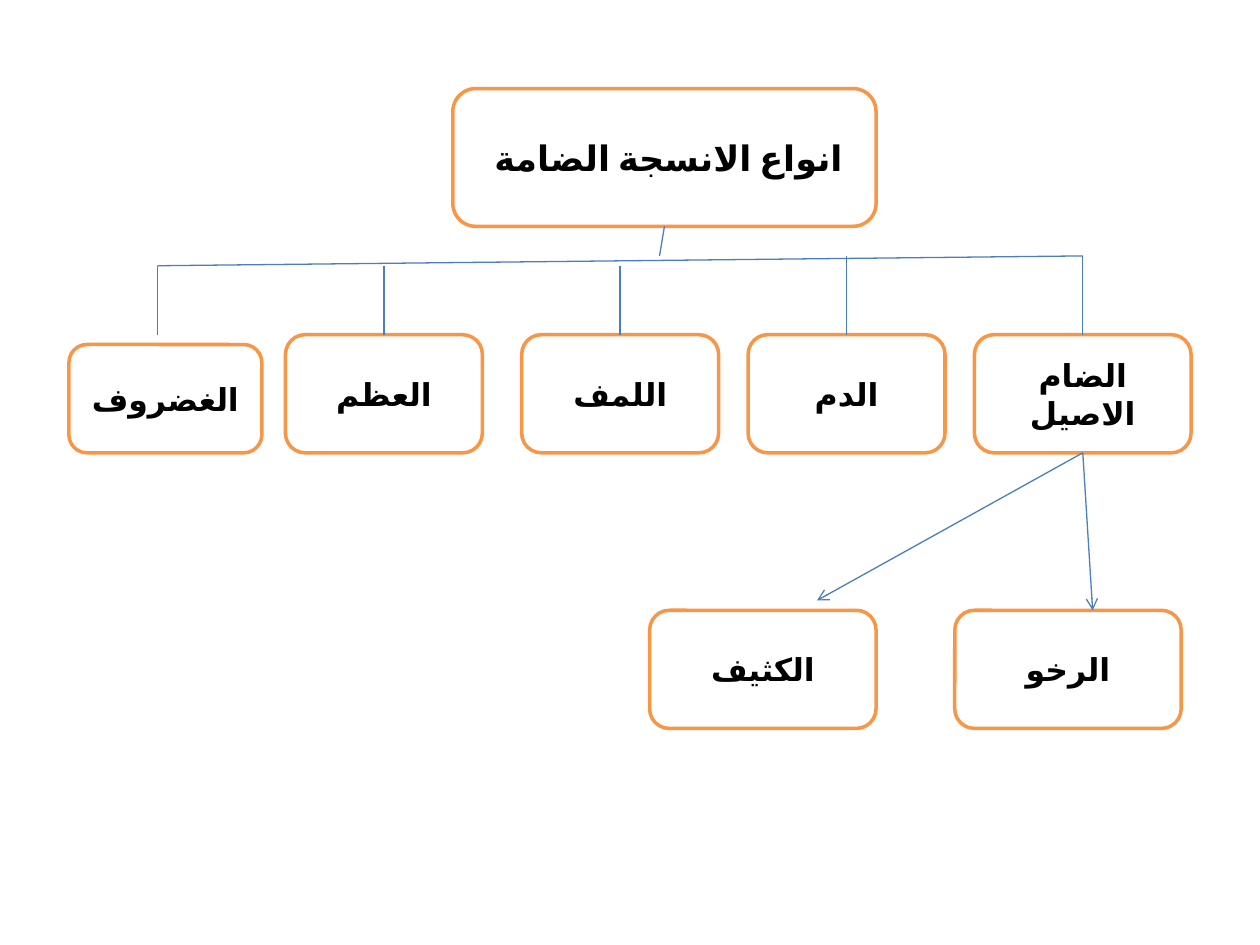
from dataclasses import dataclass

from lxml import etree
from pptx import Presentation, util as u
from pptx.dml.color import RGBColor
from pptx.enum import lang, shapes, text
from pptx.oxml.ns import qn

COLS, ROWS = 128, 96
INK = {"fill": "FFFFFF", "edge": "F79646", "text": "000000", "wire": "4B7EBC"}
FONT = "Calibri"


@dataclass(frozen=True)
class Box:
    label: str
    col: float
    row: float
    wide: float
    high: float = 12
    size: int = 18

    @property
    def mid(self) -> float:
        return self.col + self.wide / 2

    @property
    def foot(self) -> float:
        return self.row + self.high


@dataclass(frozen=True)
class Wire:
    x1: float
    y1: float
    x2: float
    y2: float
    arrow: bool = False


deck = Presentation()
deck.slide_width, deck.slide_height = u.Inches(10), u.Inches(7.5)
slide = deck.slides.add_slide(deck.slide_layouts[6])


def across(col: float) -> int:
    return round(deck.slide_width * col / COLS)


def down(row: float) -> int:
    return round(deck.slide_height * row / ROWS)


def color(name: str) -> RGBColor:
    return RGBColor.from_string(INK[name])


def draw_box(box: Box) -> None:
    shape = slide.shapes.add_shape(
        shapes.MSO_SHAPE.ROUNDED_RECTANGLE,
        across(box.col), down(box.row), across(box.wide), down(box.high))
    shape.shadow.inherit = False
    shape.fill.solid()
    shape.fill.fore_color.rgb = color("fill")
    shape.line.color.rgb = color("edge")
    shape.line.width = u.Pt(2)
    frame = shape.text_frame
    frame.word_wrap = True
    frame.vertical_anchor = text.MSO_ANCHOR.MIDDLE
    para = frame.paragraphs[0]
    para.alignment = text.PP_ALIGN.CENTER
    para._p.get_or_add_pPr().set("rtl", "1")
    font = para.font
    font.name, font.size, font.bold = FONT, u.Pt(box.size), True
    font.color.rgb = color("text")
    run = para.add_run()
    run.text = box.label
    run.font.language_id = lang.MSO_LANGUAGE_ID.ARABIC_IRAQ
    etree.SubElement(run._r.get_or_add_rPr(), qn("a:cs"), typeface=FONT)


def draw_wire(wire: Wire) -> None:
    link = slide.shapes.add_connector(
        shapes.MSO_CONNECTOR.STRAIGHT,
        across(wire.x1), down(wire.y1), across(wire.x2), down(wire.y2))
    link.line.color.rgb = color("wire")
    link.line.width = u.Pt(0.75)
    if wire.arrow:
        etree.SubElement(link.line._get_or_add_ln(), qn("a:tailEnd"), type="arrow")
    etree.SubElement(link._element.spPr, qn("a:effectLst"))


root = Box("انواع الانسجة الضامة ", 46, 9, 43, 14, 20)
proper = Box("الضام الاصيل", 99, 34, 22)
blood = Box("الدم", 76, 34, 20)
lymph = Box("اللمف", 53, 34, 20)
bone = Box("العظم", 29, 34, 20)
gristle = Box("الغضروف", 7, 35, 19.6, 11)
loose = Box("الرخو", 97, 62, 23)
dense = Box("الكثيف", 66, 62, 23)

HIGH, LOW, LEFT = 26, 27, 16
drops = [(proper.mid, HIGH), (blood.mid, HIGH), (lymph.mid, LOW),
         (bone.mid, LOW), (LEFT, LOW)]
wires = [
    Wire(root.mid, root.foot, 67, HIGH),
    Wire(proper.mid, HIGH, LEFT, LOW),
    *(Wire(col, top, col, proper.row) for col, top in drops),
    Wire(proper.mid, proper.foot, 83, 61, True),
    Wire(proper.mid, proper.foot, 111, loose.row, True),
]

for box in (root, proper, blood, lymph, bone, gristle, loose, dense):
    draw_box(box)
for wire in wires:
    draw_wire(wire)

deck.save("out.pptx")
